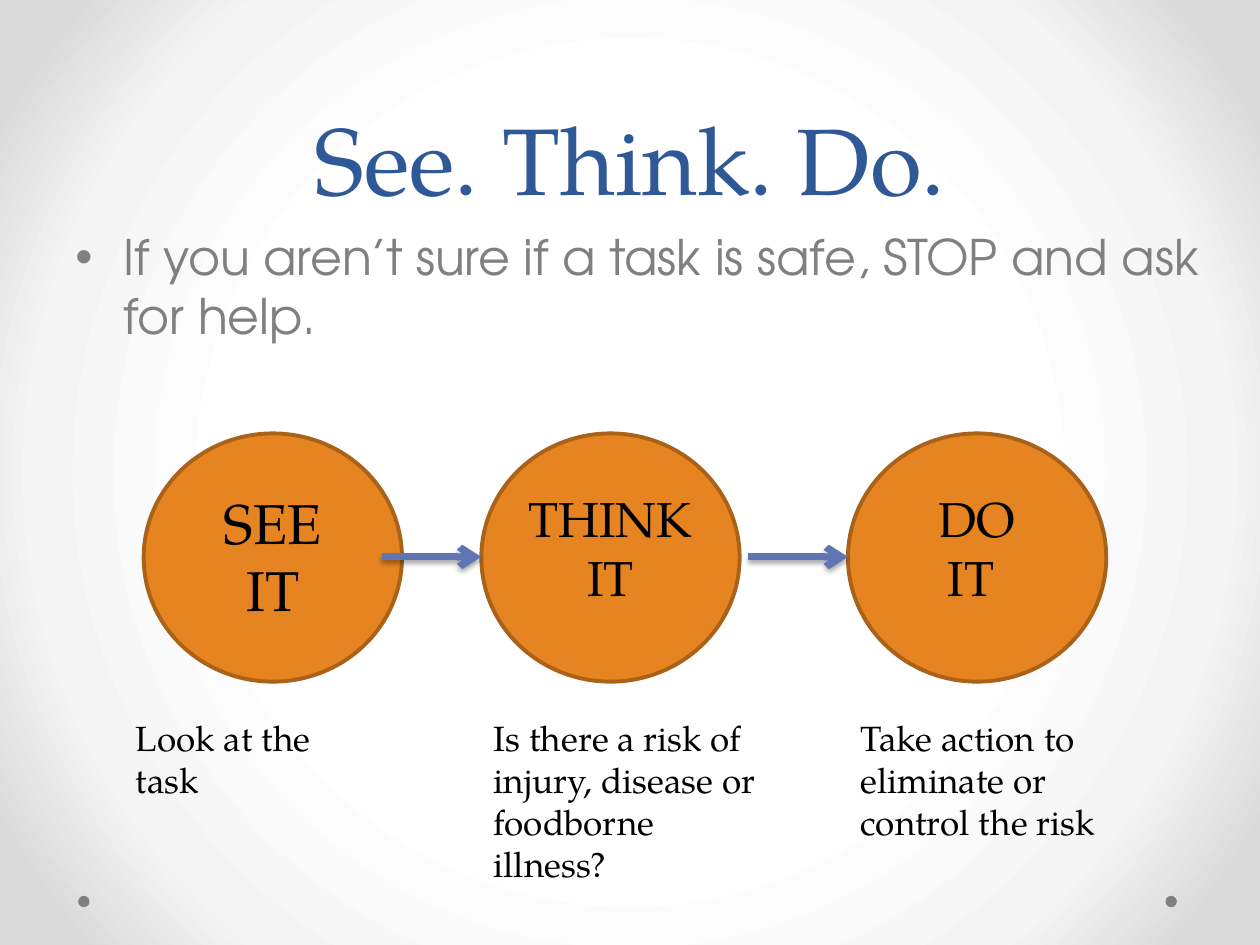
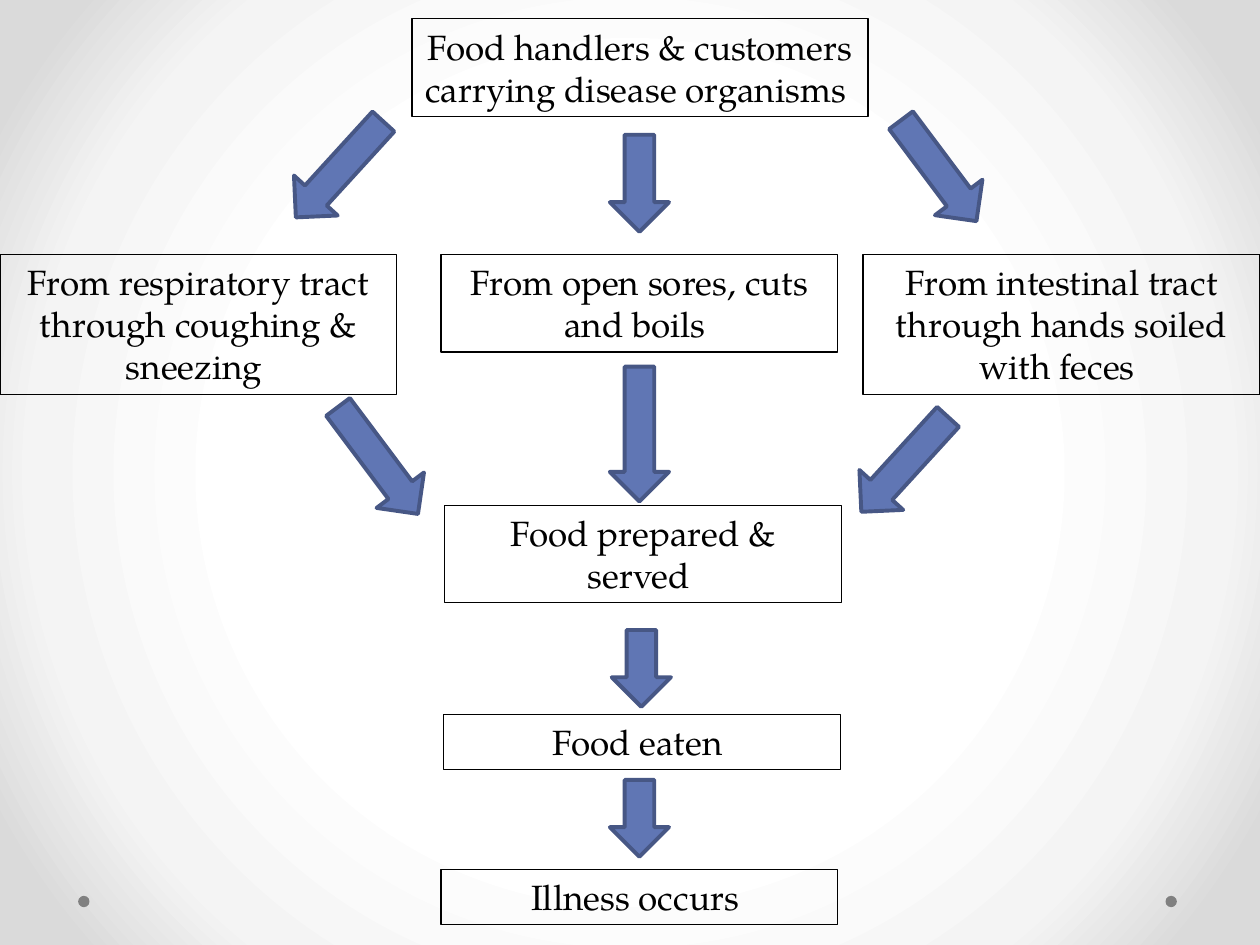
from dataclasses import dataclass

from lxml import etree
from pptx import Presentation, util as u
from pptx.dml.color import RGBColor
from pptx.enum import shapes, text
from pptx.oxml import parse_xml
from pptx.oxml.ns import nsdecls, qn

COLORS = {
    "title": "2F5897", "grey": "808080", "ink": "000000",
    "orange": "E68422", "rust": "AA6219", "blue": "6076B4", "navy": "475785",
    "glow": "FFFFFF", "haze": "F4F4F4", "edge": "DADADA",
}
SERIF, SANS = "TeX Gyre Pagella", "TeX Gyre Adventor"
COLUMNS, ROWS = 100, 75
WIDTH, HEIGHT = u.Inches(10), u.Inches(7.5)
GLOW_STOPS = {50: "glow", 76: "haze", 92: "edge"}
CENTER = text.PP_ALIGN.CENTER
OVAL, BOX, ARROW = (shapes.MSO_SHAPE.OVAL, shapes.MSO_SHAPE.RECTANGLE,
                    shapes.MSO_SHAPE.RIGHT_ARROW)

CIRCLE_TOP, CIRCLE_WIDTH, CIRCLE_HEIGHT = 34.4, 20.5, 19.7
LABEL_TOP, CAPTION_TOP, LINK_ROW, LINK_LENGTH = 38.3, 56.4, 44.2, 7.9
STAGE_WIDTH, ARROW_THICKNESS = 31.5, 4.7
DOWN, DOWN_LEFT, DOWN_RIGHT = 90, 132.4, 53.2


@dataclass(frozen=True)
class Step:
    """A circle with its label and the caption below it."""
    left: float
    label: str
    label_size: int
    label_width: float
    caption: str
    caption_left: float
    caption_width: float


@dataclass(frozen=True)
class Stage:
    """A framed box of the contamination route."""
    left: float
    top: float
    wording: str
    lines: int
    width: float = STAGE_WIDTH


@dataclass(frozen=True)
class Flow:
    """A block arrow given by its centre, length and direction."""
    x: float
    y: float
    length: float
    angle: float = DOWN


STEPS = [
    Step(11.4, "SEE IT", 32, 10.2, "Look at the task", 9.8, 20.5),
    Step(38.2, "THINK IT", 28, 15.7,
         "Is there a risk of injury, disease or foodborne illness?", 38.2, 23.6),
    Step(67.3, "DO IT ", 28, 12.6, "Take action to eliminate or control the risk", 67.3, 25.2),
]
STAGES = [
    Stage(32.7, 1.5, "Food handlers & customers carrying disease organisms ", 2, 36.2),
    Stage(0, 20.2, "From respiratory tract through coughing & sneezing ", 3),
    Stage(35, 20.2, "From open sores, cuts and boils ", 2),
    Stage(68.5, 20.2, "From intestinal tract through hands soiled with feces ", 3),
    Stage(35.3, 40.1, "Food prepared & served ", 2),
    Stage(35.2, 56.7, "Food eaten ", 1),
    Stage(35, 69, "Illness occurs ", 1),
]
FLOWS = [
    Flow(50.75, 34.45, 10.7), Flow(50.75, 64.95, 6.1),
    Flow(50.9, 53.05, 6.1), Flow(50.75, 14.55, 7.7),
    Flow(26.95, 13.45, 10.3, DOWN_LEFT), Flow(74.5, 13.55, 10, DOWN_RIGHT),
    Flow(71.8, 36.85, 10.2, DOWN_LEFT), Flow(30, 36.55, 10.6, DOWN_RIGHT),
]


def col(count: float) -> int:
    """Length of a number of grid columns."""
    return round(WIDTH * count / COLUMNS)


def row(count: float) -> int:
    """Length of a number of grid rows."""
    return round(HEIGHT * count / ROWS)


def area(left: float, top: float, width: float, height: float) -> tuple[int, int, int, int]:
    """Place on the slide of a block of grid cells."""
    return col(left), row(top), col(width), row(height)


def rgb(name: str) -> RGBColor:
    """Colour from the palette."""
    return RGBColor.from_string(COLORS[name])


def write(holder, wording: str, *, size: float = 20, font: str = SERIF, color: str = "ink",
          align=text.PP_ALIGN.LEFT, anchor=text.MSO_ANCHOR.TOP, leading=None):
    """Put one formatted paragraph into a shape and return the paragraph."""
    frame = holder.text_frame
    frame.word_wrap = True
    frame.auto_size = text.MSO_AUTO_SIZE.NONE
    frame.vertical_anchor = anchor
    paragraph = frame.paragraphs[0]
    paragraph.alignment = align
    paragraph.line_spacing = leading
    run = paragraph.add_run()
    run.text = wording
    run.font.size, run.font.name = u.Pt(size), font
    run.font.color.rgb = rgb(color)
    return paragraph


def add_text(slide, place: tuple, wording: str, **style):
    """Add a text box and return its paragraph."""
    return write(slide.shapes.add_textbox(*place), wording, **style)


def add_figure(slide, kind, place: tuple, fill: str = "", line: str = "", weight: float = 2.25):
    """Add a preset shape, without fill or line where none is named."""
    figure = slide.shapes.add_shape(kind, *place)
    figure.shadow.inherit = False
    if fill:
        figure.fill.solid()
        figure.fill.fore_color.rgb = rgb(fill)
    else:
        figure.fill.background()
    if line:
        figure.line.color.rgb = rgb(line)
        figure.line.width = u.Pt(weight)
    else:
        figure.line.fill.background()
    return figure


def add_link(slide, end: float) -> None:
    """Draw the shadowed arrow that leads to a circle's left side."""
    link = slide.shapes.add_connector(shapes.MSO_CONNECTOR.STRAIGHT, col(end - LINK_LENGTH),
                                      row(LINK_ROW), col(end), row(LINK_ROW))
    link.line.color.rgb = rgb("blue")
    link.line.width = u.Pt(4)
    etree.SubElement(link.line._get_or_add_ln(), qn("a:tailEnd"), type="arrow")
    link._element.spPr.append(parse_xml(
        f'<a:effectLst {nsdecls("a")}><a:outerShdw blurRad="{u.Pt(3.1)}" dist="{u.Pt(1.8)}" '
        f'dir="5400000" rotWithShape="0"><a:srgbClr val="{COLORS["ink"]}">'
        '<a:alpha val="35000"/></a:srgbClr></a:outerShdw></a:effectLst>'))


def add_bullet(paragraph, indent: float) -> None:
    """Give a paragraph a hanging bullet."""
    properties = paragraph._p.get_or_add_pPr()
    properties.set("marL", str(col(indent)))
    properties.set("indent", str(-col(indent)))
    etree.SubElement(properties, qn("a:buFont"), typeface="Arial")
    etree.SubElement(properties, qn("a:buChar"), char="•")


def set_glow(master) -> None:
    """Give the master a round gradient background."""
    master.background.fill.solid()
    plain = master.element.find(".//" + qn("p:bgPr")).find(qn("a:solidFill"))
    stops = "".join(f'<a:gs pos="{share * 1000}"><a:srgbClr val="{COLORS[name]}"/></a:gs>'
                    for share, name in GLOW_STOPS.items())
    plain.getparent().replace(plain, parse_xml(
        f'<a:gradFill {nsdecls("a")} rotWithShape="1"><a:gsLst>{stops}</a:gsLst>'
        '<a:path path="circle"><a:fillToRect l="50000" t="50000" r="50000" b="50000"/>'
        '</a:path></a:gradFill>'))


def add_slide(deck, layout: int):
    """Add a slide with the two footer dots."""
    slide = deck.slides.add_slide(deck.slide_layouts[layout])
    for left in (92.5, 6.2):
        add_figure(slide, OVAL, area(left, 71.1, 0.9, 0.9), "grey")
    return slide


def build_steps(deck) -> None:
    """Build the slide of the three safety steps."""
    slide = add_slide(deck, 5)
    title = slide.shapes.title
    title.left, title.top, title.width, title.height = area(5, 0, 90, 17.5)
    write(title, "See. Think. Do.", size=54, color="title", align=CENTER,
          anchor=text.MSO_ANCHOR.BOTTOM, leading=u.Pt(58))
    advice = add_text(slide, area(5, 17.5, 91.5, 53.9),
                      "If you aren’t sure if a task is safe, STOP and ask for help.",
                      size=28, font=SANS, color="grey")
    advice.space_before = u.Pt(5.6)
    add_bullet(advice, 3.8)
    for step in STEPS:
        add_figure(slide, OVAL, area(step.left, CIRCLE_TOP, CIRCLE_WIDTH, CIRCLE_HEIGHT),
                   "orange", "rust")
        add_text(slide, area(step.caption_left, CAPTION_TOP, step.caption_width, 14.5),
                 step.caption)
        label_left = step.left + (CIRCLE_WIDTH - step.label_width) / 2
        add_text(slide, area(label_left, LABEL_TOP, step.label_width, 11.8), step.label,
                 size=step.label_size, align=CENTER)
    for step in STEPS[1:]:
        add_link(slide, step.left)


def build_route(deck) -> None:
    """Build the slide of how disease reaches food."""
    slide = add_slide(deck, 6)
    for stage in STAGES:
        height = 1 + stage.lines * 3.37
        frame = add_figure(slide, BOX, area(stage.left, stage.top, stage.width, height),
                           line="ink", weight=0.75)
        write(frame, stage.wording, align=CENTER)
    for flow in FLOWS:
        place = area(flow.x - flow.length / 2, flow.y - ARROW_THICKNESS / 2,
                     flow.length, ARROW_THICKNESS)
        add_figure(slide, ARROW, place, "blue", "navy").rotation = flow.angle


def main() -> None:
    """Build and save the deck."""
    deck = Presentation()
    deck.slide_width, deck.slide_height = WIDTH, HEIGHT
    set_glow(deck.slide_master)
    build_steps(deck)
    build_route(deck)
    deck.save("out.pptx")


if __name__ == "__main__":
    main()
